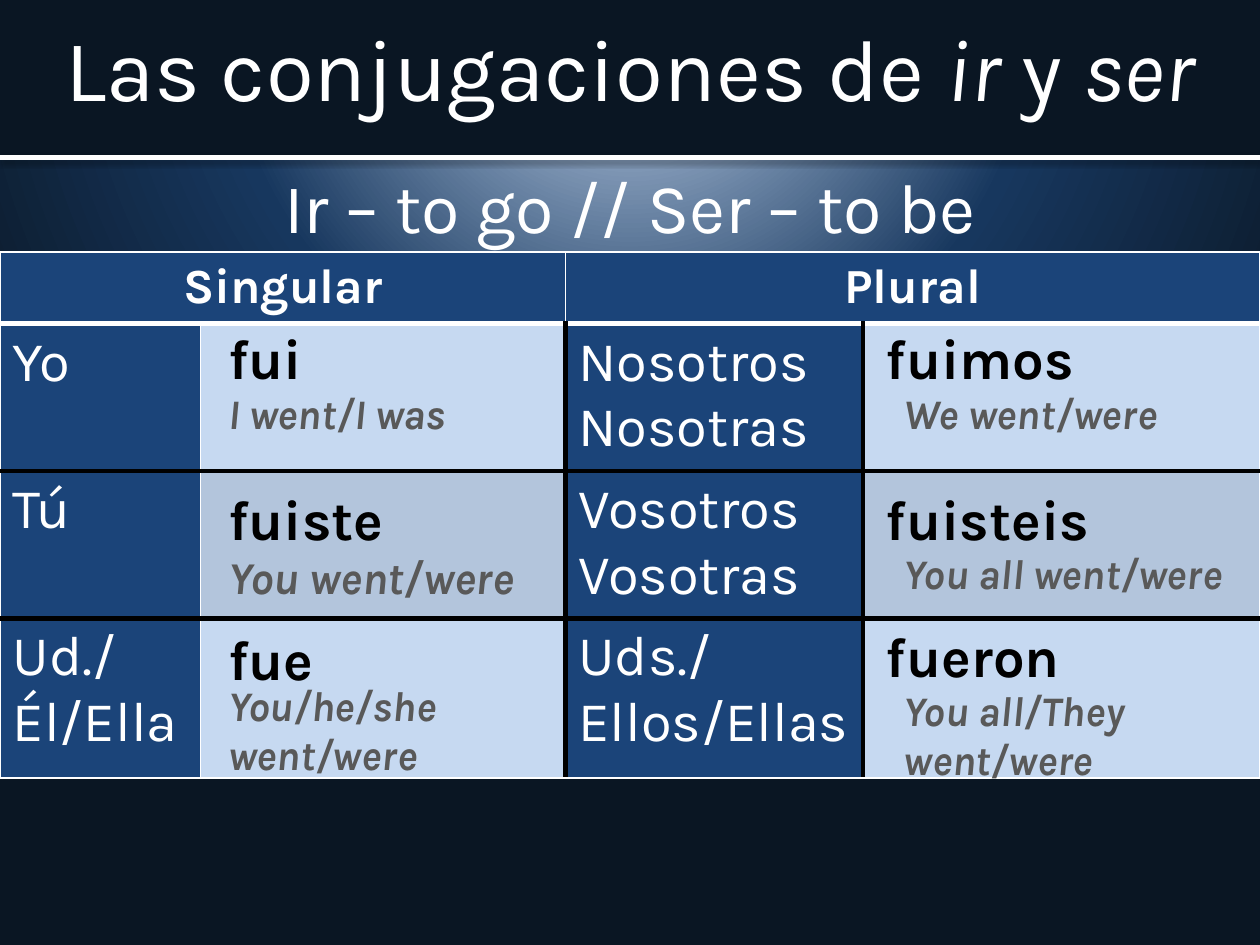
"""Build a slide with the preterite conjugations of ir and ser."""
from pptx import Presentation
from pptx.dml.color import RGBColor
from pptx.enum.shapes import MSO_CONNECTOR, MSO_SHAPE
from pptx.enum.text import MSO_ANCHOR, PP_ALIGN
from pptx.oxml import parse_xml
from pptx.oxml.ns import nsdecls, qn
from pptx.util import Inches, Pt

NAVY, BLUE, PALE, STEEL = "0A1623", "1B4479", "C6D9F1", "B3C5DC"
WHITE, BLACK, GRAY = "FFFFFF", "000000", "595959"
NO_GRID = "{2D5ABB26-0587-4C30-8999-92F81FD0307C}"


def color(code):
    return RGBColor.from_string(code)


def write(frame, text, size, ink=WHITE, bold=False, italic=False, align=PP_ALIGN.LEFT, before=0):
    frame.word_wrap = True
    for number, line in enumerate(text.split("\n")):
        para = frame.paragraphs[0] if number == 0 else frame.add_paragraph()
        para.alignment = align
        para.space_before = Pt(before)
        for index, part in enumerate(line.split("*")):
            if part:
                span = para.add_run()
                span.text = part
                span.font.name = "Karla"
                span.font.size = Pt(size)
                span.font.bold = bold
                span.font.italic = italic or index % 2 == 1
                span.font.color.rgb = color(ink)


deck = Presentation()
deck.slide_width, deck.slide_height = Inches(10), Inches(7.5)
page = deck.slides.add_slide(deck.slide_layouts[6])

page.background.fill.solid()
backdrop = page._element.cSld.bg.bgPr
stops = "".join(
    f'<a:gs pos="{place * 1000}"><a:srgbClr val="{code}"/></a:gs>'
    for place, code in [(0, PALE), (52, "17375E"), (100, NAVY)]
)
backdrop.replace(backdrop[0], parse_xml(
    f'<a:gradFill {nsdecls("a")} rotWithShape="1"><a:gsLst>{stops}</a:gsLst><a:path path="circle">'
    '<a:fillToRect l="50000" t="-80000" r="50000" b="180000"/></a:path></a:gradFill>'
))

banner = page.shapes.add_shape(MSO_SHAPE.RECTANGLE, 0, 0, Inches(10), Inches(1.25))
banner.shadow.inherit = False
banner.fill.solid()
banner.fill.fore_color.rgb = color(NAVY)
banner.line.fill.background()

subtitle = page.shapes.add_textbox(0, Inches(1.25), Inches(10), Inches(0.75))
write(subtitle.text_frame, "Ir – to go // Ser – to be", size=40, align=PP_ALIGN.CENTER, before=8)

rule = page.shapes.add_connector(MSO_CONNECTOR.STRAIGHT, 0, Inches(1.25), Inches(10), Inches(1.25))
rule.line.color.rgb = color(WHITE)
rule.line.width = Pt(3)
rule._element.spPr.append(parse_xml(
    f'<a:effectLst {nsdecls("a")}><a:outerShdw blurRad="{Pt(3.1)}" dist="{Pt(1.6)}" dir="5400000">'
    f'<a:srgbClr val="{BLACK}"><a:alpha val="38000"/></a:srgbClr></a:outerShdw></a:effectLst>'
))

title = page.shapes.add_textbox(0, 0, Inches(10), Inches(1.06))
title.text_frame.vertical_anchor = MSO_ANCHOR.MIDDLE
write(title.text_frame, "Las conjugaciones de *ir* y *ser*", size=50, align=PP_ALIGN.CENTER)

pronouns = [
    ["Singular", "", "Plural", ""],
    ["Yo", "", "Nosotros\nNosotras", ""],
    ["Tú", "", "Vosotros\nVosotras", ""],
    ["Ud./Él/Ella", "", "Uds./Ellos/Ellas", ""],
]
grid = page.shapes.add_table(4, 4, 0, Inches(2), Inches(10), Inches(4.16)).table
for column, width in zip(grid.columns, [1.59, 2.9, 2.36, 3.15]):
    column.width = Inches(width)
for row, height in zip(grid.rows, [0.55, 1.17, 1.17, 1.27]):
    row.height = Inches(height)
for start in (0, 2):
    grid.cell(0, start).merge(grid.cell(0, start + 1))

thin, white_bar, black_bar = (WHITE, 1), (WHITE, 3), (BLACK, 3)
levels = [thin, white_bar, black_bar, black_bar, thin]
uprights = [thin, thin, black_bar, black_bar, thin]
for r, words in enumerate(pronouns):
    for c, word in enumerate(words):
        cell = grid.cell(r, c)
        sides = uprights if r else [thin] * 5
        borders = {"L": sides[c], "R": sides[c + 1], "T": levels[r], "B": levels[r + 1]}
        for side, (code, points) in borders.items():
            cell._tc.get_or_add_tcPr().append(parse_xml(
                f'<a:ln{side} {nsdecls("a")} w="{Pt(points)}"><a:solidFill>'
                f'<a:srgbClr val="{code}"/></a:solidFill></a:ln{side}>'
            ))
        cell.fill.solid()
        verb_fill = STEEL if r == 2 else PALE
        cell.fill.fore_color.rgb = color(verb_fill if r and c % 2 else BLUE)
        if r == 0:
            write(cell.text_frame, word, size=28, bold=True, align=PP_ALIGN.CENTER)
        else:
            write(cell.text_frame, word, size=32)

verb = dict(size=32, ink=BLACK, bold=True)
meaning = dict(size=24, ink=GRAY, bold=True, italic=True)
entries = [
    ("fui", 1.71, 2.55, 2.46, 0.63, verb),
    ("fuiste", 1.71, 3.83, 2.34, 0.63, verb),
    ("fue", 1.71, 4.94, 2.46, 0.67, verb),
    ("fuimos", 6.93, 2.55, 2.82, 0.68, verb),
    ("fuisteis", 6.93, 3.83, 2.52, 0.63, verb),
    ("fueron", 6.93, 4.92, 2.4, 0.63, verb),
    ("I went/I was", 1.71, 3.05, 2.46, 0.5, meaning),
    ("You went/were", 1.71, 4.34, 2.67, 0.53, meaning | {"size": 26}),
    ("You/he/she went/were", 1.71, 5.37, 3, 0.9, meaning),
    ("We went/were", 7.07, 3.05, 2.46, 0.5, meaning),
    ("You all went/were", 7.07, 4.32, 2.88, 0.5, meaning),
    ("You all/They went/were", 7.07, 5.41, 2.93, 0.9, meaning),
]
for text, left, top, width, height, style in entries:
    entry = page.shapes.add_table(1, 1, Inches(left), Inches(top), Inches(width), Inches(height)).table
    entry.first_row = entry.horz_banding = False
    entry._tbl.tblPr.find(qn("a:tableStyleId")).text = NO_GRID
    entry.cell(0, 0).fill.background()
    write(entry.cell(0, 0).text_frame, text, **style)

deck.save("out.pptx")
